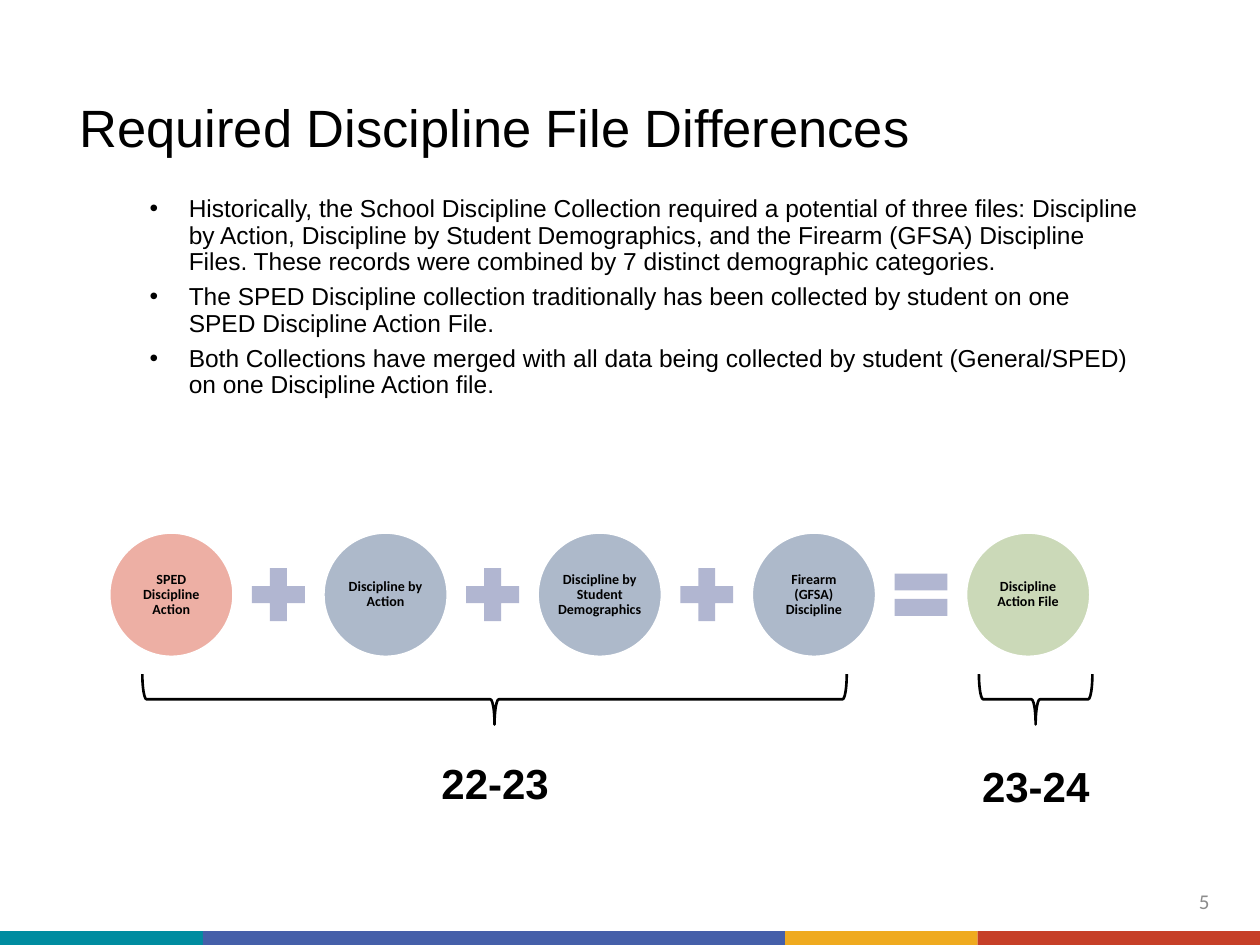
from typing import NamedTuple

from lxml.etree import SubElement
from pptx import Presentation
from pptx.dml.color import RGBColor
from pptx.enum.shapes import MSO_SHAPE
from pptx.enum.text import MSO_ANCHOR, PP_ALIGN
from pptx.oxml.ns import qn
from pptx.util import Inches, Pt


class Bar(NamedTuple):
    left: float
    width: float
    fill: str


class File(NamedTuple):
    name: str
    fill: str


class Year(NamedTuple):
    name: str
    left: float
    top: float
    brace: float
    span: float


BARS = [
    Bar(6.23, 1.53, "EFAA1F"),
    Bar(7.76, 2.24, "C63F28"),
    Bar(0, 1.61, "008CA0"),
    Bar(1.61, 4.62, "455FA9"),
]
POINTS = [
    "Historically, the School Discipline Collection required a potential of three files: "
    "Discipline by Action, Discipline by Student Demographics, and the Firearm (GFSA) "
    "Discipline Files. These records were combined by 7 distinct demographic categories.",
    "The SPED Discipline collection traditionally has been collected by student on one "
    "SPED Discipline Action File.",
    "Both Collections have merged with all data being collected by student (General/SPED) "
    "on one Discipline Action file.",
]
FILES = [
    File("SPED Discipline Action", "EDAFA4"),
    File("Discipline by Action", "ADB9CA"),
    File("Discipline by Student Demographics", "ADB9CA"),
    File("Firearm (GFSA) Discipline", "ADB9CA"),
    File("Discipline Action File", "CBD9B8"),
]
YEARS = [
    Year("22-23", 3.31, 5.96, 1.13, 5.59),
    Year("23-24", 7.6, 5.99, 7.77, 0.9),
]
SIZE, STEP, SIGN = 0.98, 1.7, 0.57
ROW, START = 4.23, 0.87


def color(code: str) -> RGBColor:
    return RGBColor.from_string(code)


def write(shape, *lines: str, size: float, font: str = "Arial", fill: str = "000000",
          bold: bool = False, align=PP_ALIGN.LEFT, anchor=MSO_ANCHOR.TOP,
          inset: float | None = None, lead: float | None = None,
          gap: float = 0, bullet: bool = False) -> None:
    frame = shape.text_frame
    frame.word_wrap = True
    frame.vertical_anchor = anchor
    if inset is not None:
        frame.margin_left = frame.margin_right = Inches(inset)
        frame.margin_top = frame.margin_bottom = Inches(inset)
    for i, line in enumerate(lines):
        para = frame.add_paragraph() if i else frame.paragraphs[0]
        para.text = line
        para.alignment = align
        if lead:
            para.line_spacing = lead
        para.space_before = Pt(gap if i else 0)
        if bullet:
            props = para._p.get_or_add_pPr()
            props.set("marL", str(Inches(0.86)))
            props.set("indent", str(Inches(-0.31)))
            SubElement(props, qn("a:buFont")).set("typeface", "Arial")
            SubElement(props, qn("a:buChar")).set("char", "•")
        para.font.size = Pt(size)
        para.font.name = font
        para.font.bold = bold
        para.font.color.rgb = color(fill)


def place(shape, left: float, top: float, width: float, height: float) -> None:
    shape.left, shape.top = Inches(left), Inches(top)
    shape.width, shape.height = Inches(width), Inches(height)


def draw(slide, kind, left: float, top: float, width: float, height: float,
         fill: str | None = None, line: str | None = None, weight: float = 1):
    shape = slide.shapes.add_shape(
        kind, Inches(left), Inches(top), Inches(width), Inches(height))
    shape.shadow.inherit = False
    if fill:
        shape.fill.solid()
        shape.fill.fore_color.rgb = color(fill)
    else:
        shape.fill.background()
    if line:
        shape.line.color.rgb = color(line)
        shape.line.width = Pt(weight)
    else:
        shape.line.fill.background()
    return shape


def label(slide, left: float, top: float, width: float, height: float,
          *lines: str, **style) -> None:
    box = slide.shapes.add_textbox(
        Inches(left), Inches(top), Inches(width), Inches(height))
    write(box, *lines, **style)


def draw_sum(slide) -> None:
    """Draw the row of files with a plus or equals sign between them."""
    for i, file in enumerate(FILES):
        left = START + i * STEP
        disc = draw(slide, MSO_SHAPE.OVAL, left, ROW, SIZE, SIZE, file.fill, "FFFFFF")
        write(disc, file.name, size=8, font="Calibri", bold=True, lead=0.9,
              align=PP_ALIGN.CENTER, anchor=MSO_ANCHOR.MIDDLE, inset=0.01)
        if i < len(FILES) - 1:
            last = i == len(FILES) - 2
            kind = MSO_SHAPE.MATH_EQUAL if last else MSO_SHAPE.MATH_PLUS
            draw(slide, kind, left + (SIZE + STEP - SIGN) / 2,
                 ROW + (SIZE - SIGN) / 2, SIGN, SIGN, "B1B6D1")


def draw_year(slide, year: Year) -> None:
    """Draw a downward brace with the school year below it."""
    mid, deep = year.brace + year.span / 2, 0.4
    brace = draw(slide, MSO_SHAPE.LEFT_BRACE, mid - deep / 2, 5.55 - year.span / 2,
                 deep, year.span, line="000000", weight=1.5)
    brace.rotation = 270
    label(slide, year.left, year.top, 1.24, 0.5, year.name, size=24, bold=True,
          align=PP_ALIGN.CENTER)


def main() -> None:
    deck = Presentation()
    deck.slide_width, deck.slide_height = Inches(10), Inches(7.5)
    slide = deck.slides.add_slide(deck.slide_layouts[5])
    for bar in BARS:
        draw(slide, MSO_SHAPE.RECTANGLE, bar.left, 7.39, bar.width, 0.11, bar.fill)
    title = slide.shapes.title
    place(title, 0.56, 0.62, 8.01, 0.71)
    write(title, "Required Discipline File Differences", size=30, lead=0.9,
          anchor=MSO_ANCHOR.BOTTOM, inset=0.07)
    label(slide, 0.54, 1.51, 8.6, 3.6, *POINTS, size=14, lead=0.9, gap=5, bullet=True)
    draw_sum(slide)
    for year in YEARS:
        draw_year(slide, year)
    label(slide, 9.42, 6.95, 0.25, 0.4, "5", size=12, font="Calibri", fill="8C8C8C",
          align=PP_ALIGN.RIGHT, anchor=MSO_ANCHOR.MIDDLE, inset=0.07)
    deck.save("out.pptx")


if __name__ == "__main__":
    main()
